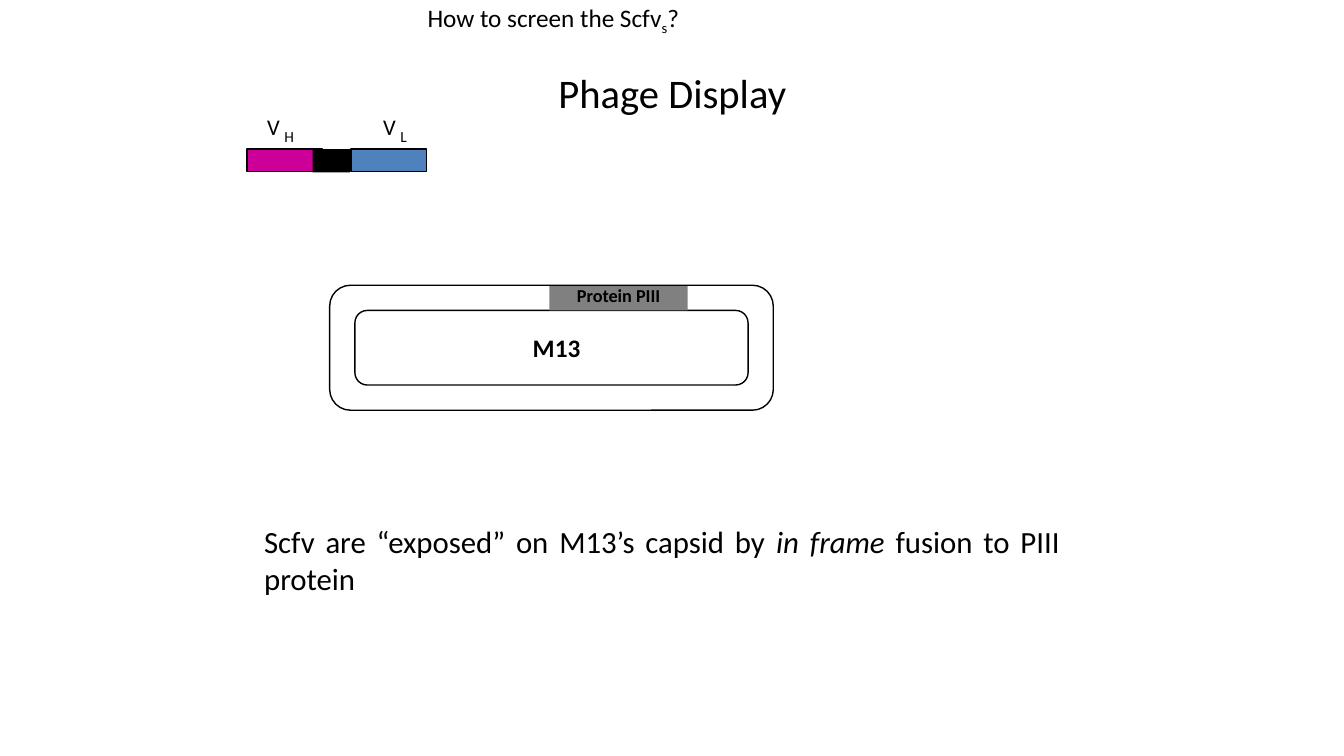
from pptx import Presentation
from pptx.dml.color import RGBColor
from pptx.enum.shapes import MSO_SHAPE
from pptx.enum.text import MSO_ANCHOR, PP_ALIGN
from pptx.util import Inches, Pt

RECT = MSO_SHAPE.RECTANGLE
ROUNDED = MSO_SHAPE.ROUNDED_RECTANGLE
LEFT, CENTER, JUSTIFY = PP_ALIGN.LEFT, PP_ALIGN.CENTER, PP_ALIGN.JUSTIFY
TOP, MIDDLE = MSO_ANCHOR.TOP, MSO_ANCHOR.MIDDLE


def color(value):
    return RGBColor.from_string(value)


class SlideBuilder:
    font_name = "Calibri"
    ink = "000000"
    margins = (0.09, 0.04)

    def __init__(self, slide):
        self.slide = slide

    def group(self):
        return self.slide.shapes.add_group_shape()

    def box(self, kind, at, fill=None, outlined=True, parent=None):
        shapes = (parent or self.slide).shapes
        shape = shapes.add_shape(kind, *map(Inches, at))
        shape.shadow.inherit = False
        if fill:
            shape.fill.solid()
            shape.fill.fore_color.rgb = color(fill)
        else:
            shape.fill.background()
        if outlined:
            shape.line.color.rgb = color(self.ink)
            shape.line.width = Pt(1)
        else:
            shape.line.fill.background()
        return shape

    def text(self, at, content, size, align=LEFT, anchor=TOP, bold=False,
             spacing=None, margins=margins, wrap=True, parent=None):
        shapes = (parent or self.slide).shapes
        frame = shapes.add_textbox(*map(Inches, at)).text_frame
        frame.word_wrap = wrap
        frame.vertical_anchor = anchor
        frame.margin_left = frame.margin_right = Inches(margins[0])
        frame.margin_top = frame.margin_bottom = Inches(margins[1])
        paragraph = frame.paragraphs[0]
        paragraph.alignment = align
        if spacing:
            paragraph.line_spacing = spacing
        paragraph.font.name = self.font_name
        paragraph.font.size = Pt(size)
        paragraph.font.bold = bold
        paragraph.font.color.rgb = color(self.ink)
        for part in content:
            paragraph.add_run().text = part
        return paragraph


def main():
    deck = Presentation()
    deck.slide_width, deck.slide_height = Inches(13.33), Inches(7.5)
    builder = SlideBuilder(deck.slides.add_slide(deck.slide_layouts[6]))

    builder.box(ROUNDED, (3.52, 3.08, 3.9, 0.74), "FFFFFF")
    builder.box(ROUNDED, (3.27, 2.83, 4.4, 1.24))
    builder.text((2.17, 0.22, 9, 1.4), ["Phage Display"], 29, CENTER, MIDDLE)
    builder.box(RECT, (5.45, 2.84, 1.37, 0.24), "808080", outlined=False)
    builder.text((3.61, 3.26, 3.82, 0.39), ["M13"], 18, CENTER, bold=True)
    builder.text((5.5, 2.85, 1.27, 0.25), ["Protein PIII"], 13, CENTER,
                 bold=True, spacing=0.65)
    explanation = builder.text(
        (2.53, 5.15, 8.07, 0.83),
        ["Scfv are “exposed” on M13’s capsid by ", "in frame ",
         "fusion to PIII protein"], 22, JUSTIFY)
    explanation.runs[1].font.italic = True

    scfv = builder.group()
    for chain, domain_left, label_left, fill in (
            ("H", 2.45, 2.65, "CC0099"), ("L", 3.48, 3.8, "4F81BD")):
        builder.box(RECT, (domain_left, 1.48, 0.75, 0.22), fill, parent=scfv)
        builder.text((label_left, 1.12, 0.12, 0.27), ["V"], 16,
                     margins=(0, 0), wrap=False, parent=scfv)
        builder.text((label_left + 0.17, 1.26, 0.09, 0.19), [chain], 11,
                     margins=(0, 0), wrap=False, parent=scfv)
    builder.box(RECT, (3.1, 1.48, 0.37, 0.23), "000000", outlined=False,
                parent=scfv)

    question = builder.text((4.15, -0.02, 5.91, 0.39),
                            ["How to screen the Scfv", "s", "?"], 18)
    question.runs[1].font._element.set("baseline", "-25000")

    deck.save("out.pptx")


if __name__ == "__main__":
    main()
